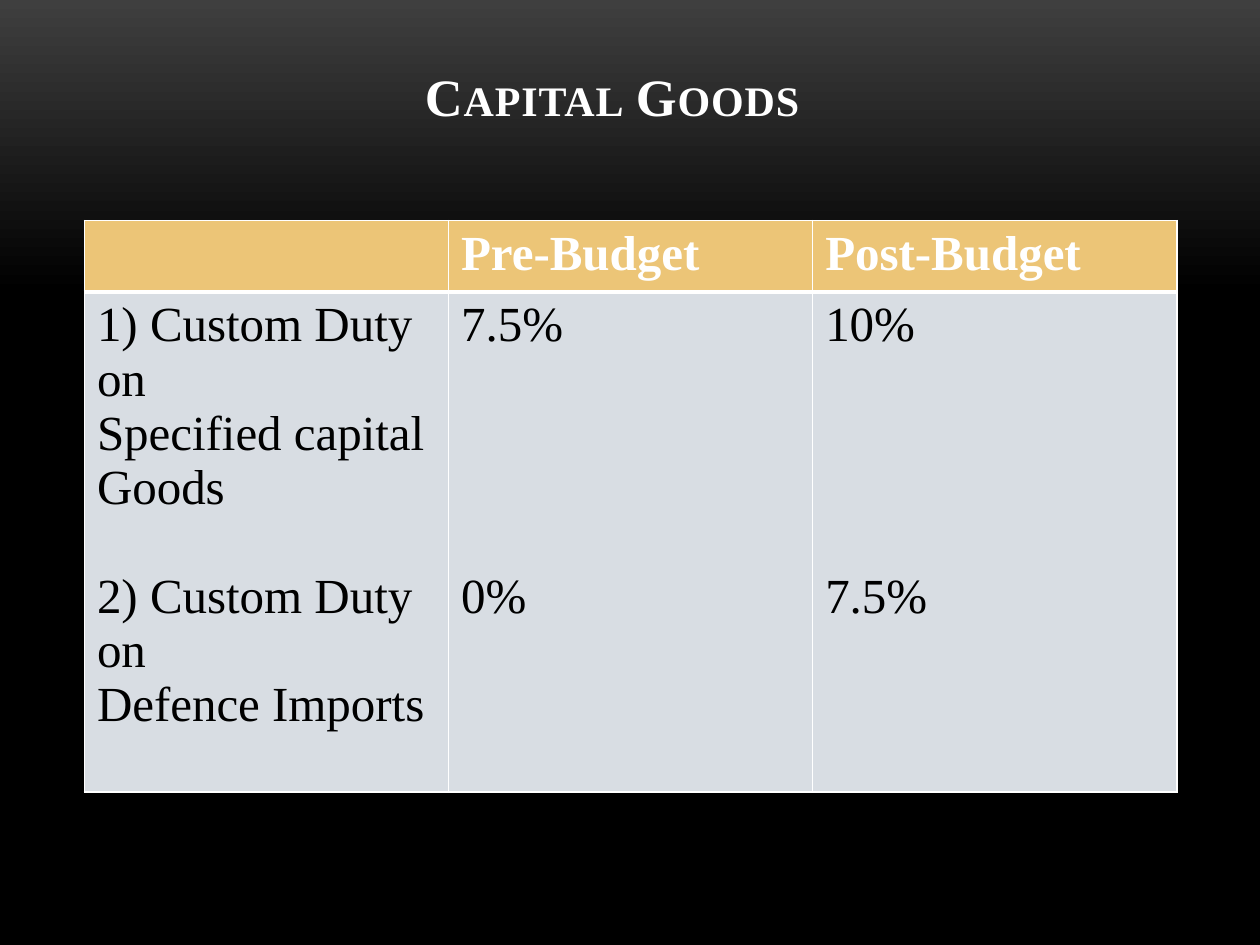
import copy

import pptx
import pptx.dml.color
import pptx.enum.text
import pptx.oxml
import pptx.oxml.ns
import pptx.util

Inches = pptx.util.Inches
Pt = pptx.util.Pt

FONT = "Times New Roman"
WHITE, BLACK = "FFFFFF", "000000"
HEADER_FILL, BODY_FILL = "ECC577", "D8DDE3"
LINE = 31  # height in points of one 28-point line

HEADINGS = ["", "Pre-Budget", "Post-Budget"]
# Each cell holds (text, space before in points) paragraphs.
BODY = [
    [("1) Custom Duty on", 0), ("Specified capital", 0), ("Goods", 0),
     ("2) Custom Duty on", LINE), ("Defence Imports", 0)],
    [("7.5%", 0), ("0%", 4 * LINE)],
    [("10%", 0), ("7.5%", 4 * LINE)],
]


def color(hex_string):
    return pptx.dml.color.RGBColor.from_string(hex_string)


def add_run(paragraph, text, size, hex_string, bold):
    run = paragraph.add_run()
    run.text = text
    run.font.name = FONT
    run.font.size = Pt(size)
    run.font.bold = bold
    run.font.color.rgb = color(hex_string)
    return run


def set_background(slide):
    fill = slide.background.fill
    fill.gradient()
    fill.gradient_angle = 270
    for stop, position, hex_string in zip(
            fill.gradient_stops, (0, 0.31), ("3F3F3F", BLACK)):
        stop.position = position
        stop.color.rgb = color(hex_string)
    stops = slide.element.find(".//" + pptx.oxml.ns.qn("a:gsLst"))
    last = copy.deepcopy(stops[-1])
    last.set("pos", "100000")
    stops.append(last)


def add_title(slide, left, top, width, height):
    frame = slide.shapes.add_textbox(left, top, width, height).text_frame
    frame.word_wrap = True
    frame.vertical_anchor = pptx.enum.text.MSO_ANCHOR.BOTTOM
    frame.margin_right = Inches(0.3)
    frame.margin_bottom = Inches(0.54)
    paragraph = frame.paragraphs[0]
    paragraph.alignment = pptx.enum.text.PP_ALIGN.CENTER
    run = add_run(paragraph, "Capital Goods", 30, WHITE, True)
    properties = run.font._element
    properties.set("cap", "small")
    properties.set("spc", "50")


def style_cell(cell, fill, top, bottom):
    """Fill the cell and draw white borders; top and bottom are in points."""
    properties = cell._tc.get_or_add_tcPr()
    for side, points in (("L", 1), ("R", 1), ("T", top), ("B", bottom)):
        properties.append(pptx.oxml.parse_xml(
            f'<a:ln{side} {pptx.oxml.ns.nsdecls("a")} w="{Pt(points)}">'
            f'<a:solidFill><a:srgbClr val="{WHITE}"/></a:solidFill>'
            f'</a:ln{side}>'))
    cell.fill.solid()
    cell.fill.fore_color.rgb = color(fill)


def fill_cell(cell, paragraphs, hex_string, bold):
    frame = cell.text_frame
    for index, (text, space) in enumerate(paragraphs):
        paragraph = frame.add_paragraph() if index else frame.paragraphs[0]
        if space:
            paragraph.space_before = Pt(space)
        add_run(paragraph, text, 28, hex_string, bold)


def add_duty_table(slide, left, top, width, row_heights):
    table = slide.shapes.add_table(
        2, len(HEADINGS), left, top, width, sum(row_heights)).table
    table.first_row = False
    table.horz_banding = False
    for row, height in zip(table.rows, row_heights):
        row.height = height
    for column, (heading, paragraphs) in enumerate(zip(HEADINGS, BODY)):
        header, body = table.cell(0, column), table.cell(1, column)
        style_cell(header, HEADER_FILL, 1, 3)
        style_cell(body, BODY_FILL, 3, 1)
        if heading:
            fill_cell(header, [(heading, 0)], WHITE, True)
        fill_cell(body, paragraphs, BLACK, False)


def main():
    presentation = pptx.Presentation()
    presentation.slide_width = Inches(10)
    presentation.slide_height = Inches(7.5)
    slide = presentation.slides.add_slide(presentation.slide_layouts[6])
    left, width = Inches(0.67), Inches(8.67)
    set_background(slide)
    add_title(slide, left, Inches(0.3), width, Inches(1.25))
    add_duty_table(slide, left, Inches(1.75), width,
                   (Inches(0.53), Inches(3.97)))
    presentation.save("out.pptx")


if __name__ == "__main__":
    main()
